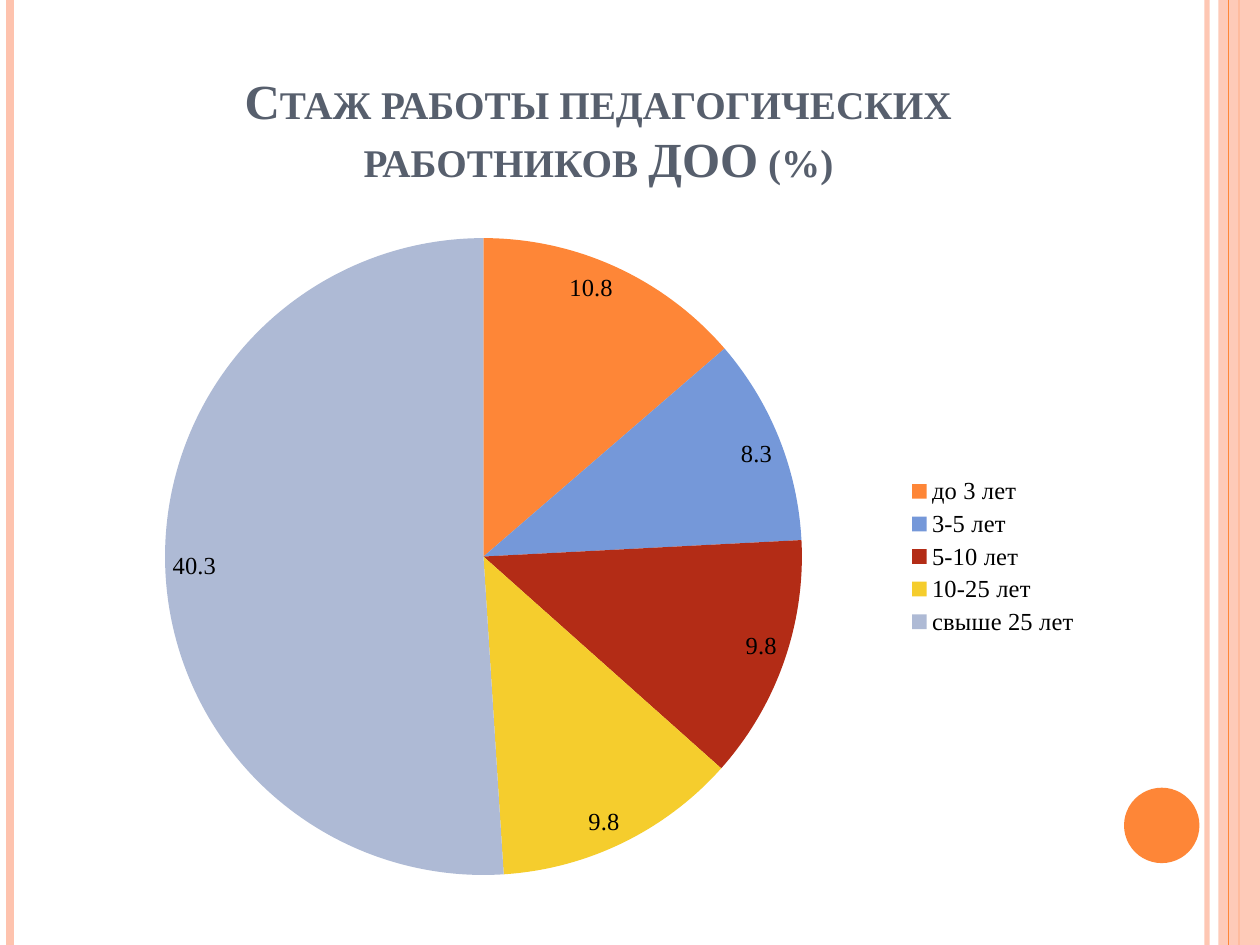
from lxml import etree
from pptx import Presentation
from pptx.chart.data import CategoryChartData
from pptx.dml.color import RGBColor
from pptx.enum import chart as ch, shapes, text
from pptx.oxml.ns import qn
from pptx.util import Cm, Pt

ORANGE, PEACH, SLATE, BLACK = "FE8637", "FEC3AE", "575F6D", "000000"
FONT = "Times New Roman"
YEARS = [
    ("до 3 лет", 10.8, ORANGE),
    ("3-5 лет", 8.3, "7598D9"),
    ("5-10 лет", 9.8, "B32C16"),
    ("10-25 лет", 9.8, "F5CD2D"),
    ("свыше 25 лет", 40.3, "AEBAD5"),
]


def rgb(value):
    return RGBColor.from_string(value)


def set_attrs(obj, values):
    for name, value in values.items():
        setattr(obj, name, value)


def set_font(font, size, color, bold=False):
    set_attrs(font, {"name": FONT, "size": Pt(size), "bold": bold})
    font.color.rgb = rgb(color)


def set_alpha(sp, percent):
    for clr in sp._element.spPr.iter(qn("a:srgbClr")):
        etree.SubElement(clr, qn("a:alpha"), val=str(percent * 1000))


def add_stripe(slide, x, top, height, color, width, alpha=100):
    sp = slide.shapes.add_connector(
        shapes.MSO_CONNECTOR.STRAIGHT, Cm(x), Cm(top), Cm(x), Cm(top + height))
    sp.line.color.rgb = rgb(color)
    sp.line.width = Pt(width)
    etree.SubElement(sp._element.spPr, qn("a:effectLst"))
    if alpha < 100:
        set_alpha(sp, alpha)


def add_filled(slide, kind, left, top, width, height, color, alpha=100):
    sp = slide.shapes.add_shape(kind, Cm(left), Cm(top), Cm(width), Cm(height))
    sp.shadow.inherit = False
    sp.fill.solid()
    sp.fill.fore_color.rgb = rgb(color)
    sp.line.fill.background()
    if alpha < 100:
        set_alpha(sp, alpha)


def add_frame(slide, left, top, width, height):
    right = left + width
    add_stripe(slide, right - 1.07, top, height, PEACH, 3, 93)
    add_stripe(slide, left + 0.21, top, height, PEACH, 4.5)
    add_stripe(slide, right - 0.42, top, height, ORANGE, 1.5)
    add_filled(slide, shapes.MSO_SHAPE.RECTANGLE,
               right - 0.84, top, 0.84, height, PEACH, 87)
    add_stripe(slide, right - 0.64, top, height, ORANGE, 0.75)
    add_filled(slide, shapes.MSO_SHAPE.OVAL,
               right - 2.74, top + height - 3.17, 1.52, 1.52, ORANGE)


def add_title(slide, left, top, width, height):
    sp = slide.shapes.add_textbox(Cm(left), Cm(top), Cm(width), Cm(height))
    tf = sp.text_frame
    set_attrs(tf, {"word_wrap": True, "vertical_anchor": text.MSO_ANCHOR.BOTTOM})
    p = tf.paragraphs[0]
    p.text = "Стаж работы педагогических\vработников ДОО (%)"
    p.alignment = text.PP_ALIGN.CENTER
    for r in p.runs:
        set_font(r.font, 28, SLATE, True)
        r.font._element.set("cap", "small")


def add_pie(slide, left, top, width, height):
    data = CategoryChartData()
    data.categories = [name for name, _, _ in YEARS]
    data.add_series("Series 1", [value for _, value, _ in YEARS])
    chart = slide.shapes.add_chart(
        ch.XL_CHART_TYPE.PIE, Cm(left), Cm(top), Cm(width), Cm(height), data).chart
    set_attrs(chart, {"has_title": False, "has_legend": True})
    set_font(chart.font, 14, BLACK)
    set_attrs(chart.legend, {"position": ch.XL_LEGEND_POSITION.RIGHT,
                             "include_in_layout": False})
    set_font(chart.legend.font, 14, BLACK)
    plot = chart.plots[0]
    set_attrs(plot, {"vary_by_categories": True, "has_data_labels": True})
    set_attrs(plot.data_labels, {"show_value": True, "show_percentage": False,
                                 "position": ch.XL_LABEL_POSITION.INSIDE_END})
    set_font(plot.data_labels.font, 14, BLACK)
    for i, (_, _, color) in enumerate(YEARS):
        fill = plot.series[0].points[i].format.fill
        fill.solid()
        fill.fore_color.rgb = rgb(color)


def main():
    prs = Presentation()
    set_attrs(prs, {"slide_width": Cm(25.4), "slide_height": Cm(19.05)})
    slide = prs.slides.add_slide(prs.slide_layouts[6])
    add_frame(slide, 0, 0, 25.4, 19.05)
    add_title(slide, 0, 0.91, 24.13, 3)
    add_pie(slide, 1.27, 4.45, 20.75, 13.54)
    prs.save("out.pptx")


if __name__ == "__main__":
    main()
